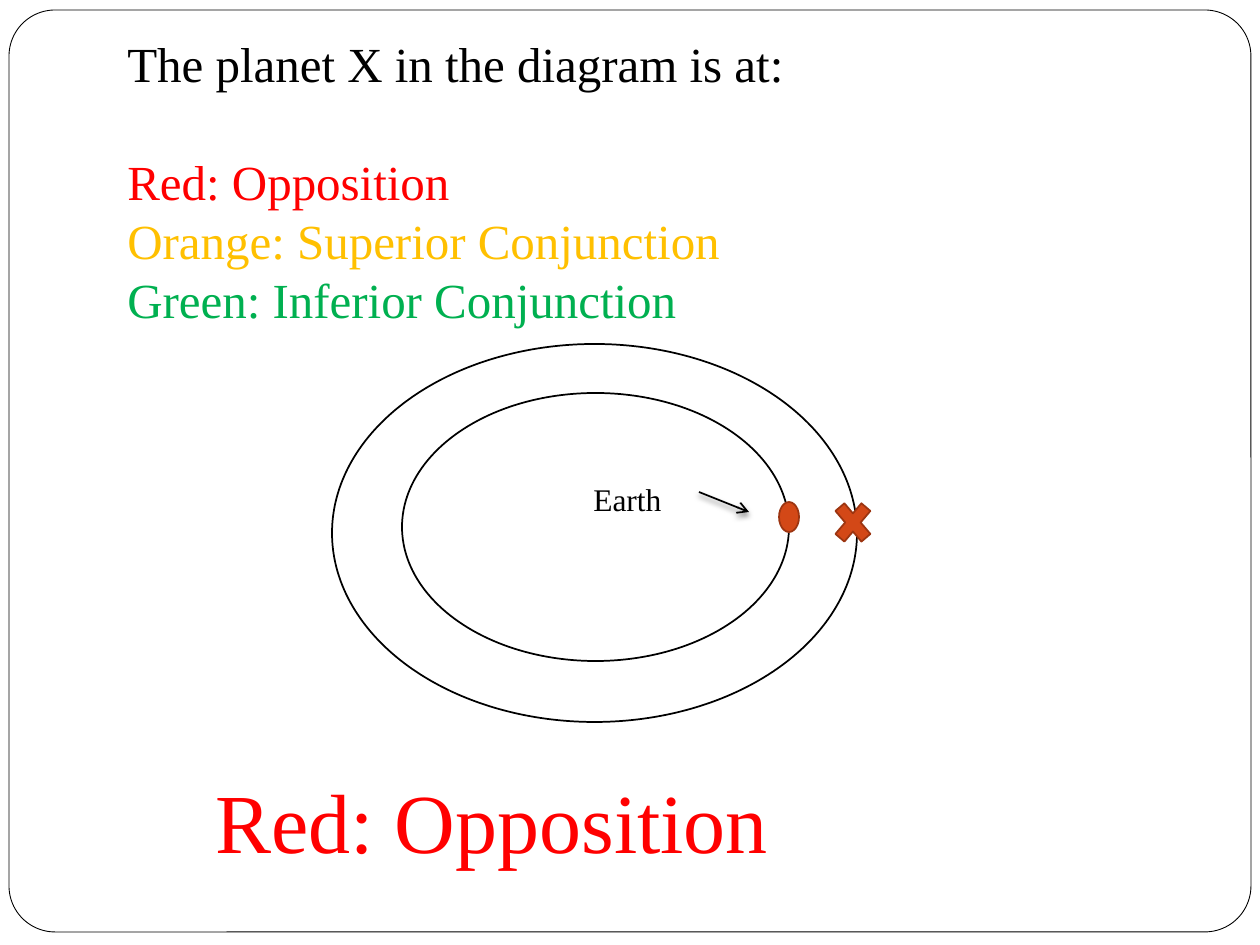
from lxml.etree import SubElement
from pptx import Presentation
from pptx.dml.color import RGBColor
from pptx.enum.shapes import MSO_CONNECTOR as Connector, MSO_SHAPE as Shape
from pptx.enum.text import MSO_ANCHOR as Anchor, MSO_AUTO_SIZE as AutoSize
from pptx.oxml.ns import qn
from pptx.util import Emu, Pt

EMU_PER_PX = 914400 / 126
BLACK, WHITE, RED = "000000", "FFFFFF", "FF0000"
ORANGE, GREEN = "FFC000", "00B050"
PLANET, PLANET_EDGE = "D34817", "9C3511"


def px(*lengths):
    return [Emu(round(length * EMU_PER_PX)) for length in lengths]


def color(value):
    return RGBColor.from_string(value)


def assign(target, values):
    for name, value in values.items():
        setattr(target, name, value)


class OrbitSlide:
    """Draws styled text, shapes and arrows on one slide."""

    font = "Times New Roman"
    leading = 1.2

    def __init__(self, deck):
        self.shapes = deck.slides.add_slide(deck.slide_layouts[6]).shapes

    def text(self, bounds, size, lines, gap_before=None):
        frame = self.shapes.add_textbox(*px(*bounds)).text_frame
        assign(frame, {
            "word_wrap": True,
            "auto_size": AutoSize.SHAPE_TO_FIT_TEXT,
            "vertical_anchor": Anchor.TOP,
            "margin_top": px(6 + size // 10)[0],
        })
        line_height = Pt(size * self.leading)
        for index, (words, shade) in enumerate(lines):
            para = frame.add_paragraph() if index else frame.paragraphs[0]
            para.line_spacing = line_height
            if index == gap_before:
                para.space_before = line_height
            span = para.add_run()
            span.text = words
            assign(span.font, {"name": self.font, "size": Pt(size)})
            span.font.color.rgb = color(shade)

    def shape(self, kind, bounds, fill=None, edge=BLACK, width=1, corner=None):
        figure = self.shapes.add_shape(kind, *px(*bounds))
        figure.shadow.inherit = False
        if fill:
            figure.fill.solid()
            figure.fill.fore_color.rgb = color(fill)
        else:
            figure.fill.background()
        figure.line.color.rgb = color(edge)
        figure.line.width = Pt(width)
        if corner is not None:
            figure.adjustments[0] = corner

    def arrow(self, start, end):
        arrow = self.shapes.add_connector(Connector.STRAIGHT, *px(*start, *end))
        arrow.line.color.rgb = color(BLACK)
        arrow.line.width = Pt(1)
        SubElement(arrow.line._get_or_add_ln(), qn("a:tailEnd"), type="arrow")
        effects = SubElement(arrow._element.spPr, qn("a:effectLst"))
        shadow = SubElement(
            effects, qn("a:outerShdw"), blurRad=str(Pt(3)), dist=str(Pt(2)),
            dir="5400000", rotWithShape="0")
        shade = SubElement(shadow, qn("a:srgbClr"), val=BLACK)
        SubElement(shade, qn("a:alpha"), val="50000")


def main():
    deck = Presentation()
    deck.slide_width, deck.slide_height = px(1260, 945)
    page = OrbitSlide(deck)

    page.shape(Shape.ROUNDED_RECTANGLE, (9, 10, 1242, 922), WHITE,
               width=0.5, corner=0.05)
    page.text((115, 26, 983, 310), 28, [
        ("The planet X in the diagram is at:", BLACK),
        ("Red: Opposition", RED),
        ("Orange: Superior Conjunction", ORANGE),
        ("Green: Inferior Conjunction", GREEN),
    ], gap_before=1)

    page.shape(Shape.OVAL, (402, 393, 387, 268), WHITE)
    page.shape(Shape.OVAL, (332, 344, 525, 378))
    page.shape(Shape.MATH_MULTIPLY, (828, 493, 50, 59), PLANET, PLANET_EDGE)
    page.shape(Shape.FLOWCHART_CONNECTOR, (779, 502, 20, 30),
               PLANET, PLANET_EDGE)
    page.text((581, 473, 139, 50), 18, [("Earth", BLACK)])
    page.arrow((699, 492), (749, 512))

    page.text((203, 760, 853, 115), 48, [("Red: Opposition", RED)])
    deck.save("out.pptx")


if __name__ == "__main__":
    main()
